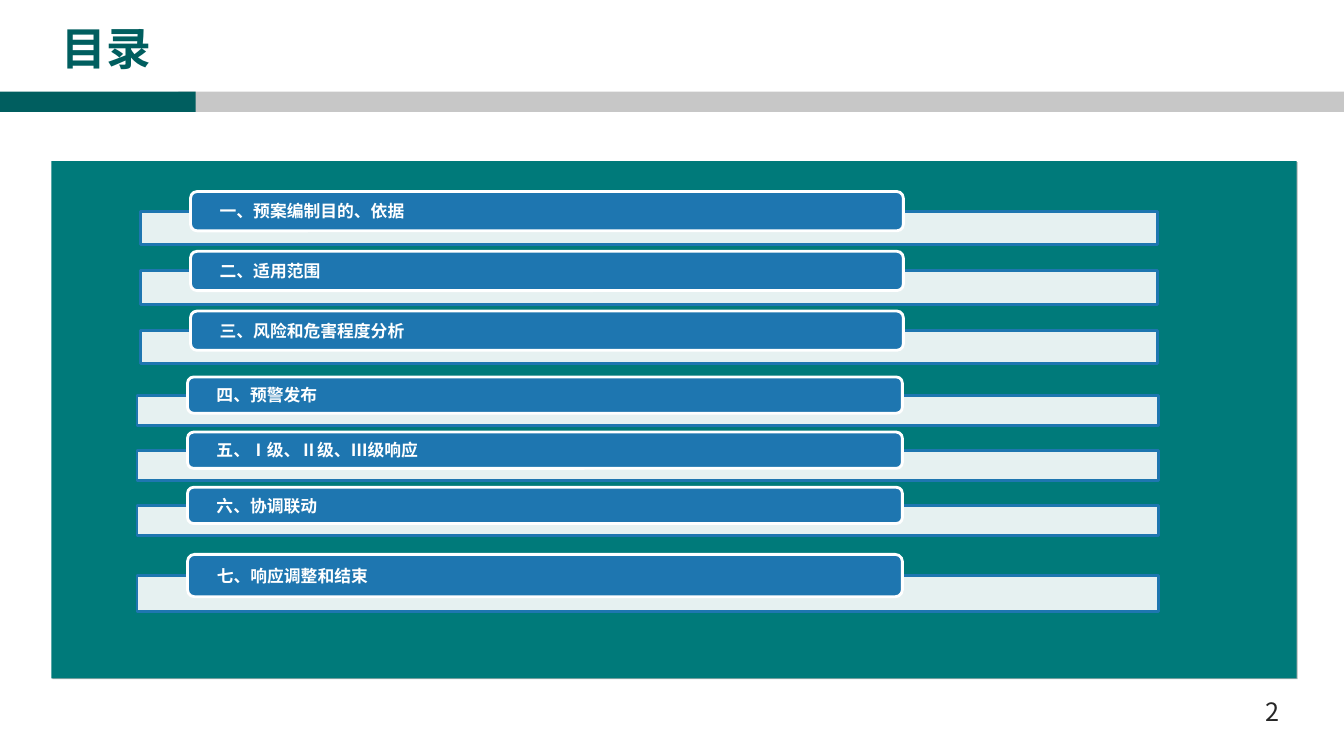
from pptx import Presentation
from pptx.dml.color import RGBColor
from pptx.enum.shapes import MSO_SHAPE as Preset
from pptx.enum.text import MSO_ANCHOR as Anchor, PP_ALIGN as Align
from pptx.oxml import parse_xml
from pptx.oxml.ns import nsdecls, qn
from pptx.util import Inches, Pt

FONT = "Noto Sans CJK SC"
DARK_TEAL, TEAL, BLUE, WHITE = "005E5F", "007A7A", "1E76B0", "FFFFFF"

GROUPS = [
    (1.39, 1.9, 10.09, 7.07, 0.39, 0.33,
     ["一、预案编制目的、依据", "二、适用范围", "三、风险和危害程度分析"]),
    (1.36, 3.74, 10.13, 7.09, 0.36, 0.3,
     ["四、预警发布", "五、Ⅰ级、Ⅱ级、Ⅲ级响应", "六、协调联动"]),
    (1.36, 5.5, 10.13, 7.09, 0.42, 0.36, ["七、响应调整和结束"]),
]


def color(value):
    """Turn a hex string into a colour."""
    return RGBColor.from_string(value)


def add_block(page, preset, left, top, width, height, fill, line=None):
    """Add a filled shape, outlined when a line colour is given."""
    block = page.shapes.add_shape(
        preset, Inches(left), Inches(top), Inches(width), Inches(height))
    block.shadow.inherit = False
    block.fill.solid()
    block.fill.fore_color.rgb = color(fill)
    if line:
        block.line.color.rgb = color(line)
        block.line.width = Pt(2)
    else:
        block.line.fill.background()
    return block


def write(box, text, size, ink, bold=False, align=Align.LEFT, inset=0.1, inset_y=0.05):
    """Fill a shape with one formatted, vertically centred line."""
    frame = box.text_frame
    frame.text = text
    frame.word_wrap = True
    frame.vertical_anchor = Anchor.MIDDLE
    frame.margin_left = frame.margin_right = Inches(inset)
    frame.margin_top = frame.margin_bottom = Inches(inset_y)
    para = frame.paragraphs[0]
    para.alignment = align
    for span in para.runs:
        font = span.font
        font.size, font.bold, font.name = Pt(size), bold, FONT
        font.color.rgb = color(ink)
        east_asian = parse_xml(f'<a:ea {nsdecls("a")} typeface="{FONT}"/>')
        font._element.find(qn("a:latin")).addnext(east_asian)


def set_alpha(shape, percent):
    """Set the opacity of a solid fill."""
    fill = shape._element.spPr.find(qn("a:solidFill"))
    fill[0].append(parse_xml(f'<a:alpha {nsdecls("a")} val="{percent * 1000}"/>'))


def add_panel(page):
    """Add the teal panel with its thin shadow."""
    panel = add_block(page, Preset.RECTANGLE, 0.51, 1.6, 12.35, 5.13, TEAL)
    effects = panel._element.spPr.find(qn("a:effectLst"))
    effects.append(parse_xml(
        f'<a:outerShdw {nsdecls("a")} dist="12700" dir="2700000">'
        '<a:srgbClr val="000000"><a:alpha val="30000"/></a:srgbClr></a:outerShdw>'))


def add_entries(page, left, top, width, label_width, label_height, strip_height, entries):
    """Add a group of strips, each with a rounded label overlapping its top."""
    pitch = label_height * 1.52
    for index, entry in enumerate(entries):
        label_top = top + index * pitch
        strip = add_block(page, Preset.RECTANGLE, left, label_top + label_height / 2,
                          width, strip_height, WHITE, BLUE)
        set_alpha(strip, 90)
        label = add_block(page, Preset.ROUNDED_RECTANGLE, left + 0.5, label_top,
                          label_width, label_height, BLUE, WHITE)
        write(label, entry, 12, WHITE, bold=True, inset=0.27, inset_y=0)


def add_title(page, text):
    """Place and format the slide title."""
    title = page.shapes.title
    title.left, title.top = Inches(0.51), Inches(0.15)
    title.width, title.height = Inches(5.56), Inches(0.64)
    write(title, text, 32, DARK_TEAL, bold=True)


def add_page_number(page, number):
    """Add the page number at the lower right."""
    box = page.shapes.add_textbox(Inches(12.26), Inches(6.86), Inches(0.73), Inches(0.4))
    write(box, number, 18, "262626", align=Align.CENTER)


def main():
    """Build the contents slide and save it."""
    deck = Presentation()
    deck.slide_width, deck.slide_height = Inches(13.33), Inches(7.5)
    page = deck.slides.add_slide(deck.slide_layouts[5])
    add_block(page, Preset.RECTANGLE, 1.77, 0.91, 11.56, 0.2, "C7C7C7")
    add_block(page, Preset.RECTANGLE, 0, 0.91, 1.94, 0.2, DARK_TEAL)
    add_page_number(page, "2")
    add_panel(page)
    add_title(page, "目录")
    for group in GROUPS:
        add_entries(page, *group)
    deck.save("out.pptx")


if __name__ == "__main__":
    main()
